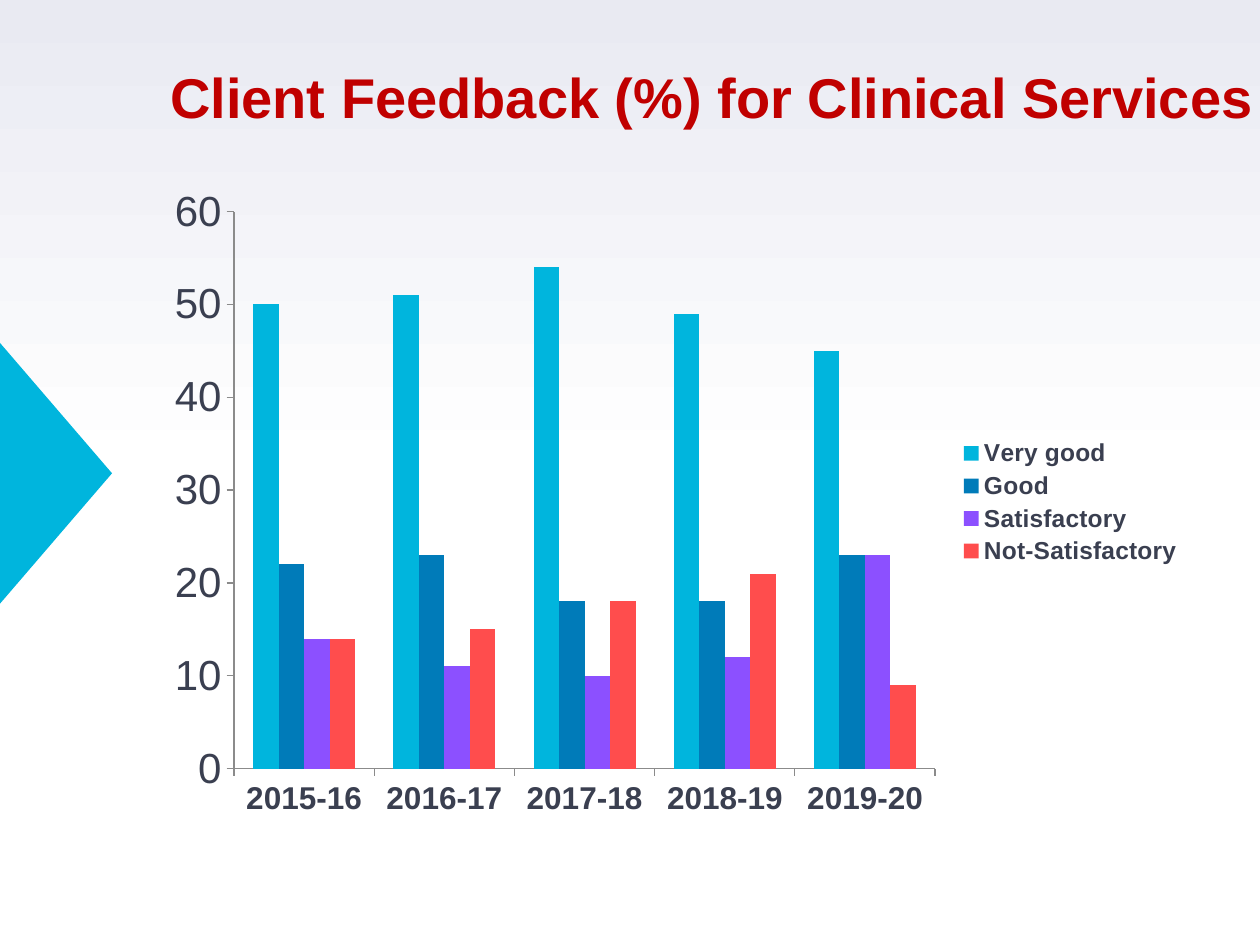
from pptx import Presentation
from pptx.chart.data import CategoryChartData
from pptx.dml.color import RGBColor
from pptx.enum.chart import XL_CHART_TYPE, XL_LEGEND_POSITION, XL_TICK_MARK
from pptx.enum.shapes import MSO_SHAPE
from pptx.enum.text import MSO_ANCHOR, MSO_AUTO_SIZE, PP_ALIGN
from pptx.util import Pt

COLUMNS = XL_CHART_TYPE.COLUMN_CLUSTERED
RIGHT = XL_LEGEND_POSITION.RIGHT
OUTSIDE, NO_TICK = XL_TICK_MARK.OUTSIDE, XL_TICK_MARK.NONE
TRIANGLE = MSO_SHAPE.ISOSCELES_TRIANGLE
TOP = MSO_ANCHOR.TOP
FIT_SHAPE = MSO_AUTO_SIZE.SHAPE_TO_FIT_TEXT
CENTER = PP_ALIGN.CENTER

FONT = "Arial"
COLORS = {
    "white": "FFFFFF",
    "haze": "E9EAF2",
    "title": "C00000",
    "text": "3A3F50",
    "axis": "8B8B8B",
    "cyan": "00B5DD",
    "blue": "007BB9",
    "purple": "8C50FF",
    "red": "FF4D4D",
}

YEARS = ["2015-16", "2016-17", "2017-18", "2018-19", "2019-20"]
RATINGS = [
    ("Very good", [50, 51, 54, 49, 45], "cyan"),
    ("Good", [22, 23, 18, 18, 23], "blue"),
    ("Satisfactory", [14, 11, 10, 12, 23], "purple"),
    ("Not-Satisfactory", [14, 15, 18, 21, 9], "red"),
]


def rgb(name):
    return RGBColor.from_string(COLORS[name])


def set_font(font, size, color, bold=False):
    font.name = FONT
    font.size = Pt(size)
    font.bold = bold
    font.color.rgb = rgb(color)


def add_background(s):
    """White lower half, fading to haze at the top."""
    fill = s.background.fill
    fill.gradient()
    fill.gradient_angle = 90
    for stop, position, color in zip(fill.gradient_stops, (0.5, 1), ("white", "haze")):
        stop.position = position
        stop.color.rgb = rgb(color)


def add_pointer(s, x, y, w, h):
    """Triangle pointing right that fills the given box."""
    # The frame is stated before the quarter turn, around the same centre
    left, top = x + (w - h) / 2, y + (h - w) / 2
    sp = s.shapes.add_shape(TRIANGLE, Pt(left), Pt(top), Pt(h), Pt(w))
    sp.rotation = 90
    sp.shadow.inherit = False
    sp.fill.solid()
    sp.fill.fore_color.rgb = rgb("cyan")
    sp.line.fill.background()


def add_title(s, x, y, w, h, text):
    tf = s.shapes.add_textbox(Pt(x), Pt(y), Pt(w), Pt(h)).text_frame
    tf.word_wrap = False
    tf.auto_size = FIT_SHAPE
    tf.vertical_anchor = TOP
    p = tf.paragraphs[0]
    p.text = text
    p.alignment = CENTER
    set_font(p.font, 32, "title", bold=True)


def style_axis(axis, size, bold):
    axis.has_major_gridlines = False
    axis.major_tick_mark = OUTSIDE
    axis.minor_tick_mark = NO_TICK
    axis.format.line.color.rgb = rgb("axis")
    axis.format.line.width = Pt(0.75)
    set_font(axis.tick_labels.font, size, "text", bold)


def add_feedback_chart(s, x, y, w, h):
    data = CategoryChartData(number_format="General")
    data.categories = YEARS
    for name, values, _ in RATINGS:
        data.add_series(name, values)
    chart = s.shapes.add_chart(COLUMNS, Pt(x), Pt(y), Pt(w), Pt(h), data).chart
    chart.has_title = False
    set_font(chart.font, 10, "text")

    # Columns
    plot = chart.plots[0]
    plot.gap_width = 150
    plot.overlap = 0
    plot.vary_by_categories = False
    for series, (_, _, color) in zip(plot.series, RATINGS):
        series.format.fill.solid()
        series.format.fill.fore_color.rgb = rgb(color)

    # Axes
    style_axis(chart.category_axis, 18, bold=True)
    style_axis(chart.value_axis, 24, bold=False)
    chart.value_axis.minimum_scale = 0
    chart.value_axis.maximum_scale = 60
    chart.value_axis.major_unit = 10

    # Legend
    chart.has_legend = True
    chart.legend.position = RIGHT
    chart.legend.include_in_layout = False
    set_font(chart.legend.font, 14, "text", bold=True)


def main():
    prs = Presentation()
    prs.slide_width, prs.slide_height = Pt(720), Pt(540)
    s = prs.slides.add_slide(prs.slide_layouts[6])
    add_background(s)
    add_pointer(s, 0, 196, 64, 149)
    add_title(s, 88, 32, 638, 46, "Client Feedback (%) for Clinical Services")
    add_feedback_chart(s, 88, 100, 595, 374)
    prs.save("out.pptx")


if __name__ == "__main__":
    main()
